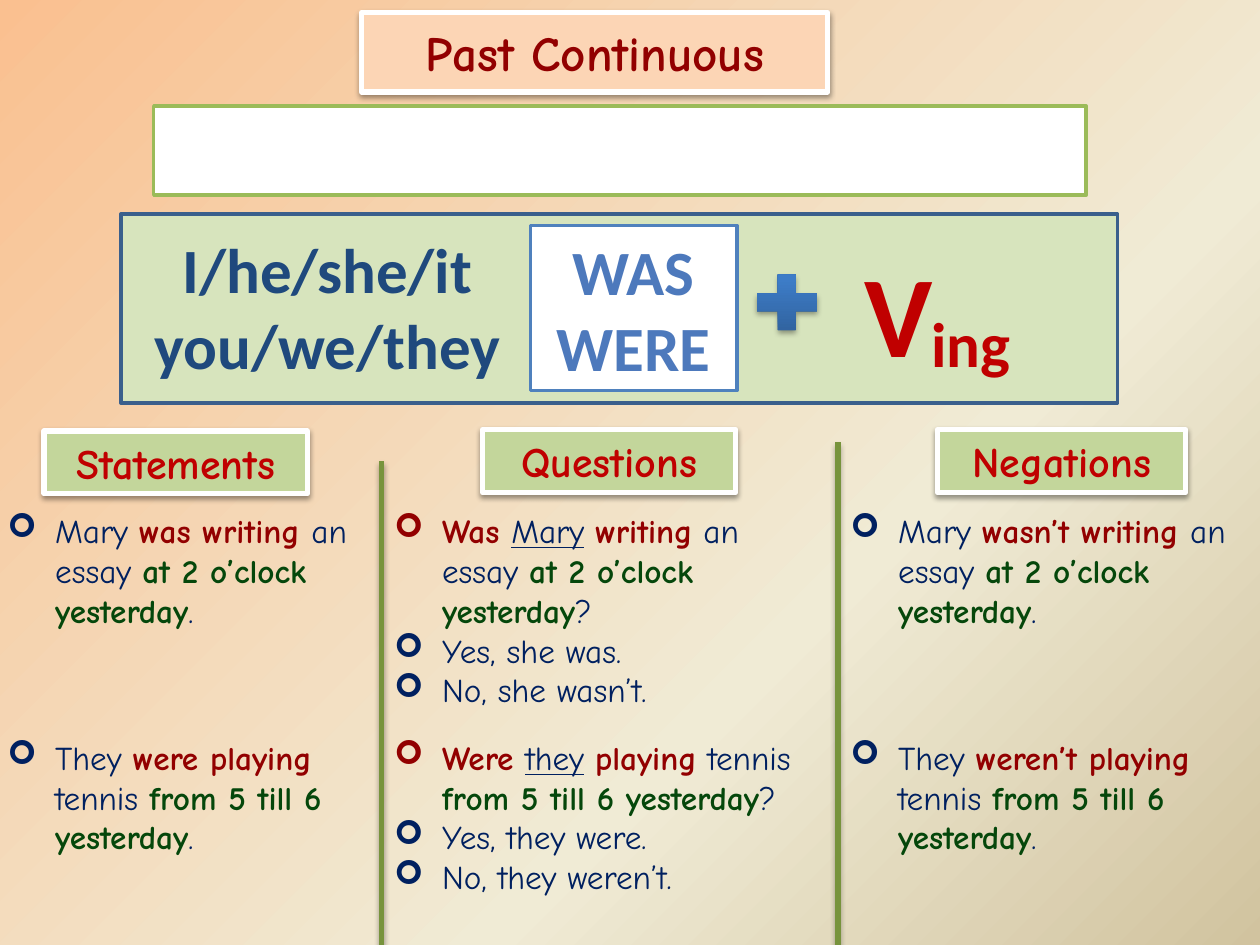
from lxml.etree import SubElement
from pptx import Presentation
from pptx.dml.color import RGBColor
from pptx.enum.shapes import MSO_CONNECTOR as Connector, MSO_SHAPE as Shape
from pptx.enum.text import MSO_ANCHOR as Anchor, MSO_AUTO_SIZE as AutoSize, PP_ALIGN as Align
from pptx.oxml.ns import qn
from pptx.util import Inches, Pt

COLORS = {
    "title": "FCD5B5", "heading": "C3D69B", "panel": "D7E4BD", "white": "FFFFFF",
    "panel_edge": "3A5F8C", "rule_edge": "9BBB59", "verb_edge": "4F81BD",
    "divider": "77933C", "black": "000000", "subject": "1F497D",
    "auxiliary": "4D79BC", "red": "C00000", "verb": "920000",
    "plain": "002060", "time": "05470B",
}
PAPER = [(0, "FAC090"), (65, "F0EBD5"), (100, "D1C39F")]
PLUS = [(0, "2F5F99"), (80, "3D7CC7"), (100, "3A7CCB")]
STYLES = {
    "plain": {"color": "plain"},
    "verb": {"color": "verb", "bold": True},
    "time": {"color": "time", "bold": True},
    "subject": {"color": "plain", "underline": True},
}
COLUMNS = [
    ("Statements", (0.35, 3.42, 2.09, 0.5), (-0.04, 3.07)),
    ("Questions", (3.83, 3.41, 2.01, 0.5), (3.03, 3.62)),
    ("Negations", (7.44, 3.41, 1.97, 0.5), (6.65, 3.35)),
]
DIVIDERS = [(3.03, 3.66), (6.65, 3.51)]
EXAMPLES = [
    (4, "Mary", ("was", "Was", "wasn’t"), "writing", "an essay",
     "at 2 o’clock yesterday", ("Yes, she was.", "No, she wasn’t.")),
    (5.8, "They", ("were", "Were", "weren’t"), "playing", "tennis",
     "from 5 till 6 yesterday", ("Yes, they were.", "No, they weren’t.")),
]


def rgb(name):
    """Return the named colour."""
    return RGBColor.from_string(COLORS[name])


def inches(box):
    """Turn a box of numbers into lengths."""
    return [Inches(value) for value in box]


def paint_gradient(fill, element, stops, angle):
    """Fill an element with a linear gradient."""
    fill.gradient()
    gradient = element.find(".//" + qn("a:gradFill"))
    stop_list = gradient.find(qn("a:gsLst"))
    for stop in list(stop_list):
        stop_list.remove(stop)
    for position, color in stops:
        stop = SubElement(stop_list, qn("a:gs"), pos=str(position * 1000))
        SubElement(stop, qn("a:srgbClr"), val=color)
    gradient.find(qn("a:lin")).set("ang", str(angle * 60000))


def cast_shadow(item, opacity, distance):
    """Give a shape or connector a soft shadow straight below it."""
    effects = SubElement(item._element.spPr, qn("a:effectLst"))
    shadow = SubElement(
        effects, qn("a:outerShdw"), blurRad=str(Pt(3.1)), dist=str(Pt(distance)),
        dir="5400000", rotWithShape="0")
    color = SubElement(shadow, qn("a:srgbClr"), val=COLORS["black"])
    SubElement(color, qn("a:alpha"), val=str(opacity * 1000))


def add_panel(slide, box, fill, edge, width=2, shadow=False):
    """Add a filled and outlined rectangle."""
    panel = slide.shapes.add_shape(Shape.RECTANGLE, *inches(box))
    panel.fill.solid()
    panel.fill.fore_color.rgb = rgb(fill)
    panel.line.color.rgb = rgb(edge)
    panel.line.width = Pt(width)
    if shadow:
        cast_shadow(panel, 38, 1.6)
    else:
        panel.shadow.inherit = False
    return panel


def add_bullet(paragraph):
    """Hang a paragraph on an arrow bullet."""
    properties = paragraph._p.get_or_add_pPr()
    properties.set("marL", str(Inches(0.38)))
    properties.set("indent", str(Inches(-0.38)))
    SubElement(properties, qn("a:buFont"), typeface="Wingdings")
    SubElement(properties, qn("a:buChar"), char="➢")


def write(holder, paragraphs, size, font="Calibri", color="plain", bold=False,
          align=Align.CENTER, anchor=Anchor.TOP, bullets=False, grow=True):
    """Write paragraphs, each a string or a list of (text, style) runs."""
    frame = holder.text_frame
    frame.word_wrap = True
    frame.vertical_anchor = anchor
    frame.auto_size = AutoSize.SHAPE_TO_FIT_TEXT if grow else AutoSize.NONE
    for index, content in enumerate(paragraphs):
        paragraph = frame.add_paragraph() if index else frame.paragraphs[0]
        paragraph.alignment = align
        if bullets:
            add_bullet(paragraph)
        runs = [(content, None)] if isinstance(content, str) else content
        for text, style in runs:
            look = STYLES.get(style, {"color": color, "bold": bold})
            run = paragraph.add_run()
            run.text = text
            run.font.size = Pt(size)
            run.font.name = font
            run.font.bold = look.get("bold", False)
            run.font.underline = look.get("underline", False)
            run.font.color.rgb = rgb(look["color"])


def add_label(slide, box, text, fill, color, size, grow=True):
    """Add a white-framed heading with a shadow."""
    label = add_panel(slide, box, fill, "white", 3, shadow=True)
    write(label, [text], size, font="Comic Neue", color=color, bold=True,
          anchor=Anchor.MIDDLE, grow=grow)


def add_formula(slide, box):
    """Build the subject, auxiliary and verb formula inside a box."""
    left, top = box[:2]
    add_panel(slide, box, "panel", "panel_edge")
    auxiliary = add_panel(slide, (left + 3.25, top + 0.09, 1.64, 1.31), "white", "verb_edge")
    write(auxiliary, ["WAS", "WERE"], 36, color="auxiliary", bold=True, anchor=Anchor.MIDDLE)
    plus = slide.shapes.add_shape(
        Shape.MATH_PLUS, *inches((left + 4.96, top + 0.4, 0.65, 0.6)))
    paint_gradient(plus.fill, plus._element.spPr, PLUS, 270)
    plus.line.fill.background()
    cast_shadow(plus, 35, 1.8)
    parts = [
        ((5.8, 0.17, 0.68, 1.21), ["V"], 66, "red"),
        ((6.17, 0.67, 1.15, 0.71), ["ing"], 36, "red"),
        ((0.14, 0.08, 3, 1.31), ["I/he/she/it", "you/we/they"], 36, "subject"),
    ]
    for (x, y, width, height), lines, size, color in parts:
        part = slide.shapes.add_textbox(*inches((left + x, top + y, width, height)))
        write(part, lines, size, color=color, bold=True)


def add_divider(slide, x, top):
    """Draw a vertical rule down to the foot of the slide."""
    divider = slide.shapes.add_connector(Connector.STRAIGHT, *inches((x, top, x, 7.5)))
    divider.line.color.rgb = rgb("divider")
    divider.line.width = Pt(3)
    cast_shadow(divider, 35, 1.8)


def example_lines(kind, subject, auxiliary, verb, thing, time, answers):
    """Compose the sentence of one kind, with short answers for a question."""
    if kind == "Questions":
        name = "they" if subject == "They" else subject
        question = [(f"{auxiliary} ", "verb"), (name, "subject"), (" ", "plain"),
                    (verb, "verb"), (f" {thing} ", "plain"), (time, "time"), ("?", "plain")]
        return [question, *answers]
    return [[(f"{subject} ", "plain"), (f"{auxiliary} {verb} ", "verb"),
             (f"{thing} ", "plain"), (time, "time"), (".", "plain")]]


def add_column(slide, index, heading, heading_box, left, width):
    """Place a heading and its example sentences."""
    add_label(slide, heading_box, heading, "heading", "red", 24)
    for top, subject, auxiliaries, *rest in EXAMPLES:
        lines = example_lines(heading, subject, auxiliaries[index], *rest)
        height = 1.7 if len(lines) > 1 else 1.06
        example = slide.shapes.add_textbox(*inches((left, top, width, height)))
        write(example, lines, 19, font="Comic Neue", align=Align.LEFT, bullets=True)


def main():
    """Build the slide and save it."""
    deck = Presentation()
    deck.slide_width, deck.slide_height = Inches(10), Inches(7.5)
    slide = deck.slides.add_slide(deck.slide_layouts[6])
    paint_gradient(slide.background.fill, slide._element, PAPER, 45)
    add_formula(slide, (0.96, 1.7, 7.91, 1.5))
    add_label(slide, (2.87, 0.1, 3.7, 0.63), "Past Continuous", "title", "verb", 28, grow=False)
    add_panel(slide, (1.22, 0.84, 7.4, 0.71), "white", "rule_edge")
    for x, top in DIVIDERS:
        add_divider(slide, x, top)
    for index, (heading, heading_box, (left, width)) in enumerate(COLUMNS):
        add_column(slide, index, heading, heading_box, left, width)
    deck.save("out.pptx")


if __name__ == "__main__":
    main()
